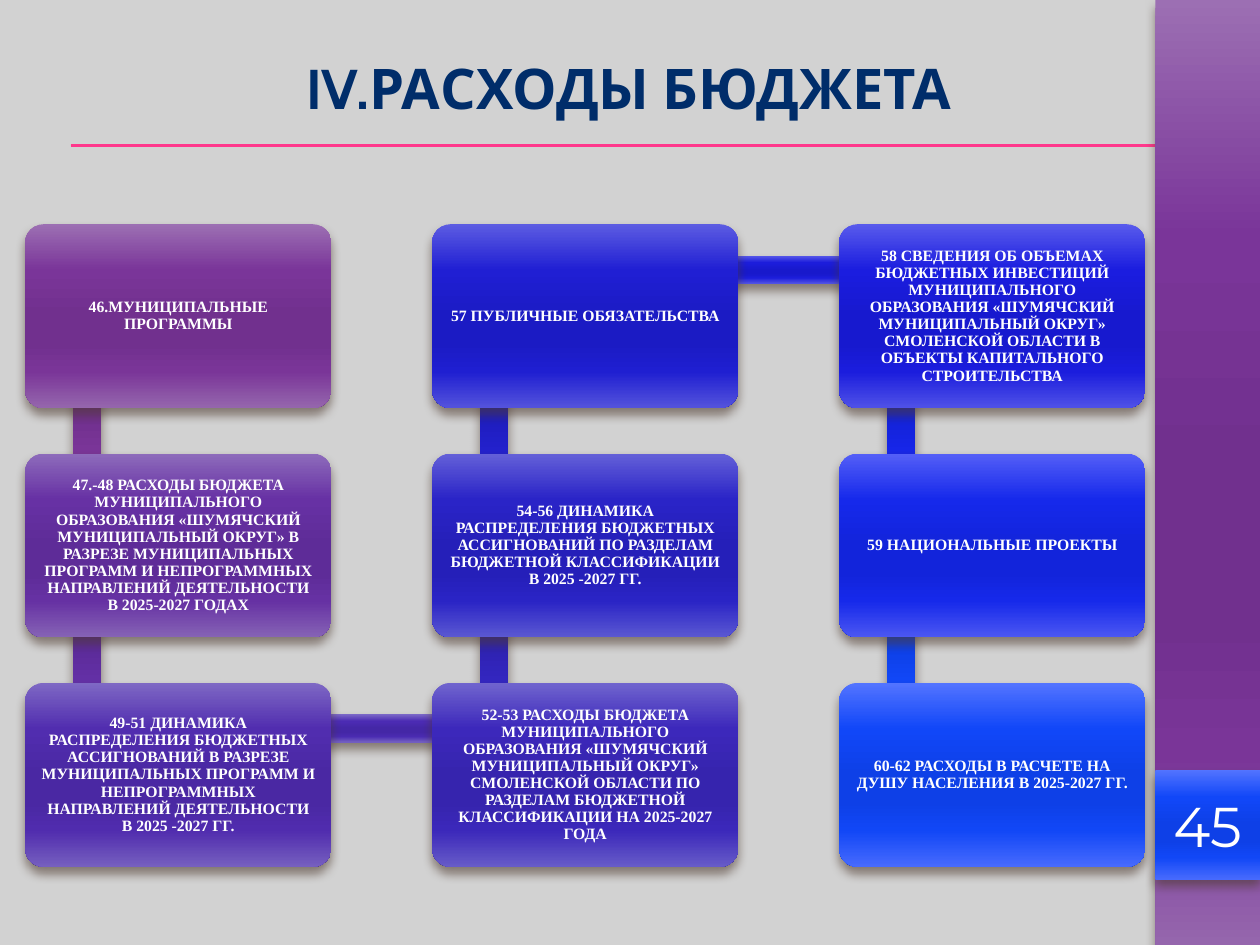
from pptx import Presentation
from pptx.dml.color import RGBColor
from pptx.enum.shapes import MSO_CONNECTOR, MSO_SHAPE
from pptx.enum.text import MSO_ANCHOR, PP_ALIGN
from pptx.oxml import parse_xml
from pptx.oxml.ns import nsdecls, qn
from pptx.util import Inches, Pt

RECT, ROUNDED = MSO_SHAPE.RECTANGLE, MSO_SHAPE.ROUNDED_RECTANGLE
STRAIGHT = MSO_CONNECTOR.STRAIGHT
CENTER, MIDDLE = PP_ALIGN.CENTER, MSO_ANCHOR.MIDDLE

STOPS = (0, 25, 50, 65, 80, 100)
PURPLE = "9C6FB3 7A3599 71308E 71308E 7A3598 9566AD"
BLUE = "5374FF 1147F8 0E40E7 0E40E7 1147F6 476AFD"


def add_panel(kind, left, top, width, height, colors):
    """Glossy panel: vertical six-stop gradient and a soft shadow below."""
    panel = slide.shapes.add_shape(kind, *map(Inches, (left, top, width, height)))
    panel.fill.gradient()
    panel.fill.gradient_angle = 270
    panel.line.fill.background()
    panel.shadow.inherit = False
    properties = panel._element.spPr
    stop_list = properties.find(qn("a:gradFill")).find(qn("a:gsLst"))
    for old_stop in list(stop_list):
        stop_list.remove(old_stop)
    for position, color in zip(STOPS, colors.split()):
        stop_list.append(parse_xml(
            f'<a:gs {nsdecls("a")} pos="{position * 1000}">'
            f'<a:srgbClr val="{color}"/></a:gs>'))
    properties.find(qn("a:effectLst")).append(parse_xml(
        f'<a:outerShdw {nsdecls("a")} blurRad="{Pt(6)}" dist="{Pt(4)}" '
        'dir="5400000" rotWithShape="0"><a:srgbClr val="4E3B30">'
        '<a:alpha val="60000"/></a:srgbClr></a:outerShdw>'))
    return panel


def write(box, text, font_name, size, color, bold, inset):
    frame = box.text_frame
    frame.word_wrap = True
    frame.vertical_anchor = MIDDLE
    frame.margin_left = frame.margin_right = Inches(inset)
    frame.margin_top = frame.margin_bottom = Inches(inset)
    frame.text = text
    paragraph = frame.paragraphs[0]
    paragraph.alignment = CENTER
    font = paragraph.runs[0].font
    font.name, font.size, font.bold = font_name, Pt(size), bold
    font.color.rgb = RGBColor.from_string(color)
    return paragraph


prs = Presentation()
prs.slide_width, prs.slide_height = Inches(10), Inches(7.5)
slide = prs.slides.add_slide(prs.slide_layouts[6])
slide.background.fill.solid()
slide.background.fill.fore_color.rgb = RGBColor.from_string("D2D2D2")

# Double rule under the heading
for rule_y in (1.15, 1.16):
    rule = slide.shapes.add_connector(
        STRAIGHT, Inches(0.56), Inches(rule_y), Inches(10), Inches(rule_y))
    rule.line.color.rgb = RGBColor.from_string("FF388C")
    rule.line.width = Pt(0.75)
    rule._element.spPr.append(parse_xml(f'<a:effectLst {nsdecls("a")}/>'))

# Side band, heading and page number
add_panel(RECT, 9.17, 0, 0.83, 7.5, PURPLE)
heading = slide.shapes.add_textbox(Inches(0.64), Inches(0.21), Inches(8.7), Inches(0.97))
write(heading, "IV.РАСХОДЫ БЮДЖЕТА", "Cabin", 32, "002D6A", True, 0.05)
page_number = add_panel(RECT, 9.17, 6.11, 0.83, 0.87, BLUE)
write(page_number, "45", "Montserrat", 32, "FFFFFF", False, 0.05)

# Sections in reading order: text, box gradient, gradient of the link to the next box
sections = [
    ("46.МУНИЦИПАЛЬНЫЕ ПРОГРАММЫ", PURPLE, PURPLE),
    ("47.-48 РАСХОДЫ БЮДЖЕТА МУНИЦИПАЛЬНОГО ОБРАЗОВАНИЯ «ШУМЯЧСКИЙ МУНИЦИПАЛЬНЫЙ "
     "ОКРУГ» В РАЗРЕЗЕ МУНИЦИПАЛЬНЫХ ПРОГРАММ И НЕПРОГРАММНЫХ НАПРАВЛЕНИЙ "
     "ДЕЯТЕЛЬНОСТИ В 2025-2027 ГОДАХ",
     "8D6BBB 6731A4 5E2C98 5E2C98 6631A3 8663B5",
     "8B6BBD 6430A6 5C2B9A 5C2B9A 6330A5 8462B7"),
    ("49-51 ДИНАМИКА РАСПРЕДЕЛЕНИЯ БЮДЖЕТНЫХ АССИГНОВАНИЙ В РАЗРЕЗЕ "
     "МУНИЦИПАЛЬНЫХ ПРОГРАММ И НЕПРОГРАММНЫХ НАПРАВЛЕНИЙ ДЕЯТЕЛЬНОСТИ "
     "В 2025 -2027 ГГ.",
     "7E68C4 512DAF 4A28A3 4A28A3 502CAE 765FBF",
     "7A67C7 4B2BB3 4427A6 4427A6 4A2BB1 725EC1"),
    ("52-53 РАСХОДЫ БЮДЖЕТА МУНИЦИПАЛЬНОГО ОБРАЗОВАНИЯ «ШУМЯЧСКИЙ МУНИЦИПАЛЬНЫЙ "
     "ОКРУГ» СМОЛЕНСКОЙ ОБЛАСТИ ПО РАЗДЕЛАМ БЮДЖЕТНОЙ КЛАССИФИКАЦИИ "
     "НА 2025-2027 ГОДА",
     "7064CE 3C28BB 3624AE 3624AE 3B28BA 675BC8",
     "6A63D2 3326C0 2E22B2 2E22B2 3326BF 625ACC"),
    ("54-56 ДИНАМИКА РАСПРЕДЕЛЕНИЯ БЮДЖЕТНЫХ АССИГНОВАНИЙ ПО РАЗДЕЛАМ "
     "БЮДЖЕТНОЙ КЛАССИФИКАЦИИ В 2025 -2027 ГГ.",
     "6460D8 2A24C7 251FB9 251FB9 2A24C5 5B58D2",
     "5F5EDD 2321CD 1E1DBF 1E1DBF 2321CC 5655D8"),
    ("57 ПУБЛИЧНЫЕ ОБЯЗАТЕЛЬСТВА",
     "5C5CE2 201FD3 1B1BC4 1B1BC4 1F1FD1 5453DC",
     "595AE9 1C1DDB 1819CC 1819CC 1C1DDA 5051E4"),
    ("58 СВЕДЕНИЯ ОБ ОБЪЕМАХ БЮДЖЕТНЫХ ИНВЕСТИЦИЙ МУНИЦИПАЛЬНОГО ОБРАЗОВАНИЯ "
     "«ШУМЯЧСКИЙ МУНИЦИПАЛЬНЫЙ ОКРУГ» СМОЛЕНСКОЙ ОБЛАСТИ В ОБЪЕКТЫ "
     "КАПИТАЛЬНОГО СТРОИТЕЛЬСТВА",
     "585AEC 1B1DDF 1719CF 1719CF 1B1DDD 4F51E7",
     "545EF6 1726E9 1322D9 1322D9 1726E8 4C55F0"),
    ("59 НАЦИОНАЛЬНЫЕ ПРОЕКТЫ",
     "545FF7 1629EB 1224DB 1224DB 1629EA 4B57F2", BLUE),
    ("60-62 РАСХОДЫ В РАСЧЕТЕ НА ДУШУ НАСЕЛЕНИЯ В 2025-2027 ГГ.", BLUE, None),
]

# The chain snakes through the grid: down, up, down
GRID_LEFT, GRID_TOP = 0.2, 1.78
COLUMN_STEP, ROW_STEP = 3.23, 1.82
BOX_WIDTH, BOX_HEIGHT = 2.43, 1.46
LINK_WIDTH, ROWS = 0.22, 3
places = []
for index in range(len(sections)):
    column, row = divmod(index, ROWS)
    if column % 2:
        row = ROWS - 1 - row
    places.append((GRID_LEFT + column * COLUMN_STEP, GRID_TOP + row * ROW_STEP))

for index, (text, box_colors, link_colors) in enumerate(sections):
    left, top = places[index]
    # Link first, so that both boxes cover its ends
    if link_colors:
        next_left, next_top = places[index + 1]
        if next_left == left:
            add_panel(RECT, left + 0.38, min(top, next_top) + 0.35,
                      LINK_WIDTH, ROW_STEP, link_colors)
        else:
            add_panel(RECT, left + 0.5, top + 0.25, COLUMN_STEP, LINK_WIDTH, link_colors)
    box = add_panel(ROUNDED, left, top, BOX_WIDTH, BOX_HEIGHT, box_colors)
    box.adjustments[0] = 0.1
    paragraph = write(box, text, "Times New Roman", 9, "FFFFFF", True, 0.08)
    paragraph.line_spacing = 0.9

prs.save("out.pptx")
